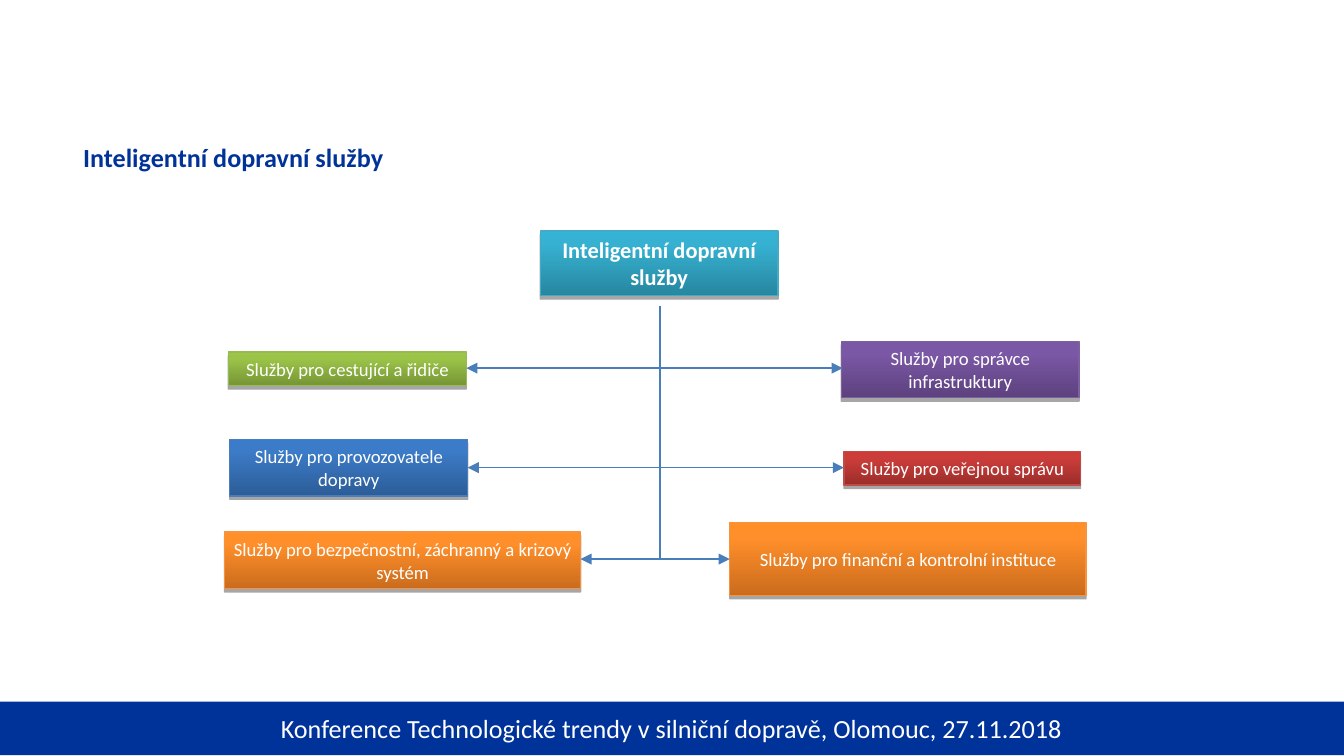
from copy import deepcopy

from pptx import Presentation
from pptx.dml.color import RGBColor
from pptx.enum.shapes import MSO_CONNECTOR as Connector, MSO_SHAPE as Shape
from pptx.enum.text import MSO_ANCHOR as Anchor, MSO_AUTO_SIZE as AutoSize, PP_ALIGN as Align
from pptx.oxml import parse_xml
from pptx.oxml.ns import nsdecls, qn
from pptx.util import Inches, Pt

NAVY = "003399"
WHITE = "FFFFFF"
CONNECTOR_BLUE = "4A7EBB"
TRUNK_X, TRUNK_TOP = 4.91, 2.28
ORANGE = ("CB6C1D", "FF8F2A", "FF8F26", "F69240")

SERVICES = [
    ("Služby pro cestující a řidiče", (1.7, 2.62, 1.77, 0.25),
     ("769535", "9BC348", "9CC746", "98B954")),
    ("Služby pro bezpečnostní, záchranný a krizový systém", (1.67, 3.96, 2.65, 0.42), ORANGE),
    ("Služby pro správce infrastruktury", (6.26, 2.54, 1.77, 0.42),
     ("5D417E", "7B58A6", "7B57A8", "7D60A0")),
    ("Služby pro veřejnou správu", (6.28, 3.36, 1.76, 0.25),
     ("9B2D2A", "CB3D3A", "CE3B37", "BE4B48")),
    ("Služby pro provozovatele dopravy", (1.71, 3.27, 1.77, 0.42),
     ("2C5D98", "3C7BC7", "3A7CCB", "4A7EBB")),
]
BRANCHES = [(6.27, 2.74), (3.47, 2.74), (6.28, 3.48), (3.48, 3.48), (4.32, 4.16), (5.43, 4.16)]


def color(value):
    return RGBColor.from_string(value)


def write(shape, text, size, text_color, bold=False, align=Align.CENTER):
    paragraph = shape.text_frame.paragraphs[0]
    paragraph.alignment = align
    run = paragraph.add_run()
    run.text = text
    run.font.name = "Calibri"
    run.font.size = Pt(size)
    run.font.bold = bold
    run.font.color.rgb = color(text_color)


def add_footer(slide, text):
    shape = slide.shapes.add_shape(Shape.RECTANGLE, 0, Inches(5.22), Inches(10), Inches(0.4))
    shape.shadow.inherit = False
    shape.fill.solid()
    shape.fill.fore_color.rgb = color(NAVY)
    shape.line.fill.background()
    shape.text_frame.word_wrap = False
    shape.text_frame.vertical_anchor = Anchor.MIDDLE
    write(shape, text, 14, WHITE)


def add_heading(slide, text):
    shape = slide.shapes.add_textbox(Inches(0.52), Inches(1), Inches(9.01), Inches(0.34))
    shape.text_frame.word_wrap = True
    shape.text_frame.auto_size = AutoSize.SHAPE_TO_FIT_TEXT
    write(shape, text, 14, NAVY, True, Align.LEFT)


def apply_gradient(shape, colors):
    shape.fill.gradient()
    shape.fill.gradient_angle = 90
    stop_list = shape._element.spPr.find(qn("a:gradFill")).find(qn("a:gsLst"))
    stop_list.append(deepcopy(stop_list[-1]))
    for stop, position, value in zip(shape.fill.gradient_stops, (0, 0.8, 1), colors):
        stop.position = position
        stop.color.rgb = color(value)


def apply_shadow(shape):
    shape.shadow.inherit = False
    effects = shape._element.spPr.find(qn("a:effectLst"))
    effects.append(parse_xml(
        f'<a:outerShdw {nsdecls("a")} blurRad="0" dist="{Pt(1.8)}" dir="5400000" rotWithShape="0">'
        '<a:srgbClr val="000000"><a:alpha val="35000"/></a:srgbClr></a:outerShdw>'))


def add_box(slide, text, bounds, colors, size=10, bold=False, side_margin=0.04,
            auto_size=AutoSize.SHAPE_TO_FIT_TEXT):
    shape = slide.shapes.add_shape(Shape.RECTANGLE, *map(Inches, bounds))
    apply_gradient(shape, colors[:3])
    shape.line.color.rgb = color(colors[3])
    shape.line.width = Pt(0.75)
    apply_shadow(shape)
    frame = shape.text_frame
    frame.word_wrap = True
    frame.auto_size = auto_size
    frame.vertical_anchor = Anchor.MIDDLE
    frame.margin_left = frame.margin_right = Inches(side_margin)
    frame.margin_top = frame.margin_bottom = Inches(0.04)
    write(shape, text, size, WHITE, bold)


def add_branch(slide, end_x, end_y):
    drop, reach = end_y - TRUNK_TOP, abs(end_x - TRUNK_X)
    left = (TRUNK_X + end_x - drop) / 2
    top = (TRUNK_TOP + end_y - reach) / 2
    connector = slide.shapes.add_connector(
        Connector.ELBOW, *map(Inches, (left, top, left + drop, top + reach)))
    properties = connector._element.spPr
    properties.find(qn("a:prstGeom")).set("prst", "bentConnector2")
    transform = properties.find(qn("a:xfrm"))
    if end_x > TRUNK_X:
        transform.set("rot", "16200000")
        transform.set("flipH", "1")
    else:
        transform.set("rot", "5400000")
    connector.line.color.rgb = color(CONNECTOR_BLUE)
    connector.line.width = Pt(0.75)
    properties.find(qn("a:ln")).append(parse_xml(f'<a:tailEnd {nsdecls("a")} type="triangle"/>'))
    properties.append(parse_xml(f'<a:effectLst {nsdecls("a")}/>'))


def main():
    presentation = Presentation()
    presentation.slide_width = Inches(10)
    presentation.slide_height = Inches(10 * 9 / 16)
    slide = presentation.slides.add_slide(presentation.slide_layouts[6])
    add_footer(slide, "Konference Technologické trendy v silniční dopravě, Olomouc, 27.11.2018")
    add_heading(slide, "Inteligentní dopravní služby")
    add_box(slide, "Inteligentní dopravní služby", (4.02, 1.72, 1.77, 0.48),
            ("2787A0", "36B1D2", "34B3D6", "46AAC5"), 12, True)
    for text, bounds, colors in SERVICES:
        add_box(slide, text, bounds, colors)
    for end_x, end_y in BRANCHES[:-1]:
        add_branch(slide, end_x, end_y)
    add_box(slide, "Služby pro finanční a kontrolní instituce", (5.43, 3.89, 2.65, 0.54),
            ORANGE, side_margin=0.08, auto_size=AutoSize.NONE)
    add_branch(slide, *BRANCHES[-1])
    presentation.save("out.pptx")


if __name__ == "__main__":
    main()
